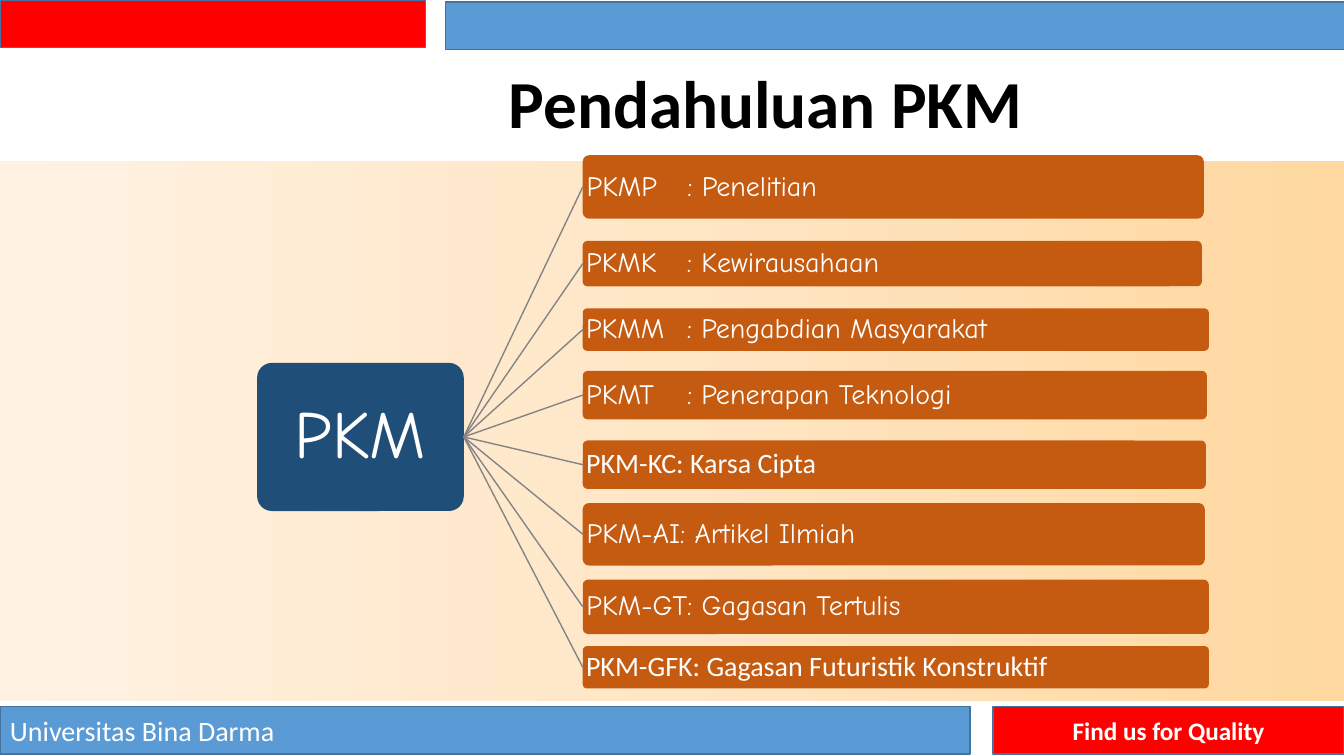
import copy

import pptx
import pptx.util
import pptx.dml.color
import pptx.enum.shapes
import pptx.enum.text
import pptx.oxml.ns
from pptx.util import Inches

KIND = pptx.enum.shapes.MSO_SHAPE
ALIGN = pptx.enum.text.PP_ALIGN
MIDDLE = pptx.enum.text.MSO_ANCHOR.MIDDLE
WHITE = "FFFFFF"
BLUE = "5B9BD5"
RED = "FF0000"
COMIC = "Comic Neue"
CALIBRI = "Calibri"

ROWS = [
    ("PKMP\t: Penelitian", COMIC, 1.54, 6.16, 0.63),
    ("PKMK\t: Kewirausahaan", COMIC, 2.39, 6.14, 0.45),
    ("PKMM\t: Pengabdian Masyarakat", COMIC, 3.06, 6.21, 0.42),
    ("PKMT\t: Penerapan Teknologi", COMIC, 3.68, 6.19, 0.48),
    ("PKM-KC: Karsa Cipta", CALIBRI, 4.37, 6.18, 0.48),
    ("PKM-AI: Artikel Ilmiah", COMIC, 4.99, 6.17, 0.62),
    ("PKM-GT: Gagasan Tertulis", COMIC, 5.75, 6.21, 0.54),
    ("PKM-GFK: Gagasan Futuristik Konstruktif", CALIBRI, 6.41, 6.21, 0.42),
]


def paint(color, code):
    color.rgb = pptx.dml.color.RGBColor.from_string(code)


def write(shape, text, font, size, color, align=ALIGN.LEFT, bold=False, inset=0.1, space=1.0):
    frame = shape.text_frame
    frame.word_wrap = True
    frame.vertical_anchor = MIDDLE
    frame.margin_left = frame.margin_right = Inches(inset)
    frame.margin_top = frame.margin_bottom = Inches(min(inset, 0.05))
    line = frame.paragraphs[0]
    line.text = text
    line.alignment = align
    line.line_spacing = space
    line.font.name = font
    line.font.size = pptx.util.Pt(size)
    line.font.bold = bold
    paint(line.font.color, color)


def add_box(slide, kind, *place):
    shape = slide.shapes.add_shape(kind, *map(Inches, place))
    shape.shadow.inherit = False
    shape.line.fill.background()
    return shape


def add_field(slide):
    field = add_box(slide, KIND.RECTANGLE, 0, 1.6, 13.33, 5.36)
    field.fill.gradient()
    field.fill.gradient_angle = 180
    first = field._element.spPr.find(".//" + pptx.oxml.ns.qn("a:gs"))
    first.addnext(copy.deepcopy(first))
    shades = [(0, "FFD8A0"), (0.5, "FFE6C5"), (1, "FFF2E3")]
    for stop, (spot, code) in zip(field.fill.gradient_stops, shades):
        stop.position = spot
        paint(stop.color, code)


def add_bar(slide, code, *place):
    bar = add_box(slide, KIND.RECTANGLE, *place)
    bar.fill.solid()
    paint(bar.fill.fore_color, code)
    paint(bar.line.color, "43739E")
    bar.line.width = pptx.util.Pt(1)
    return bar


def add_node(slide, code, *place):
    node = add_box(slide, KIND.ROUNDED_RECTANGLE, *place)
    node.adjustments[0] = 0.1
    node.fill.solid()
    paint(node.fill.fore_color, code)
    return node


def add_link(slide, start, end):
    link = slide.shapes.add_connector(pptx.enum.shapes.MSO_CONNECTOR.STRAIGHT, 0, 0, 0, 0)
    link.begin_connect(start, 3)
    link.end_connect(end, 1)
    paint(link.line.color, "848484")
    link.line.width = pptx.util.Pt(1)
    link._element.spPr.append(pptx.oxml.parse_xml(
        "<a:effectLst %s/>" % pptx.oxml.ns.nsdecls("a")))


def main():
    deck = pptx.Presentation()
    deck.slide_width = Inches(13.33)
    deck.slide_height = Inches(7.5)
    slide = deck.slides.add_slide(deck.slide_layouts[6])

    add_field(slide)
    add_bar(slide, RED, 0, 0, 4.22, 0.47)
    add_bar(slide, BLUE, 4.42, 0.02, 8.92, 0.47)
    school = add_bar(slide, BLUE, 0, 7.01, 9.62, 0.47)
    write(school, "Universitas Bina Darma", CALIBRI, 20, WHITE)
    motto = add_bar(slide, RED, 9.85, 7.01, 3.48, 0.47)
    write(motto, "Find us for Quality", CALIBRI, 18, WHITE, ALIGN.CENTER, True)

    title = slide.shapes.add_textbox(*map(Inches, (2.78, 0.57, 9.63, 0.97)))
    write(title, "Pendahuluan PKM", CALIBRI, 48, "000000", ALIGN.CENTER, True, space=0.9)

    root = add_node(slide, "1F4E79", 2.55, 3.6, 2.05, 1.47)
    write(root, "PKM", COMIC, 48, WHITE, ALIGN.CENTER, inset=0.07, space=0.9)
    for text, font, top, width, height in ROWS:
        node = add_node(slide, "C55A11", 5.78, top, width, height)
        write(node, text, font, 20, WHITE, inset=0.02, space=0.9)
        add_link(slide, root, node)

    deck.save("out.pptx")


if __name__ == "__main__":
    main()
